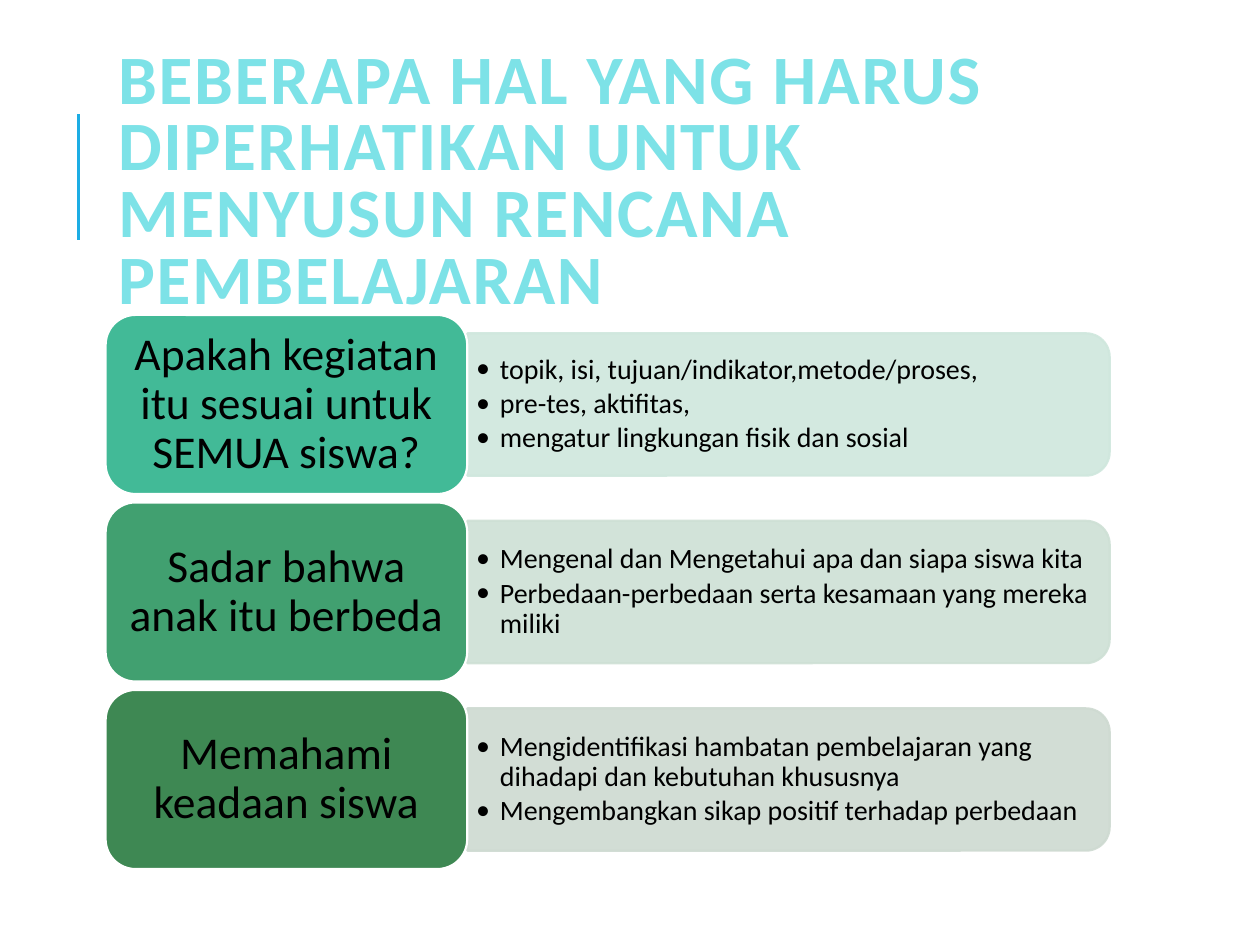
"""Build a slide of three lesson-planning points with their details."""
from dataclasses import dataclass

from lxml.etree import SubElement
from pptx import Presentation
from pptx.dml.color import RGBColor
from pptx.enum.shapes import MSO_CONNECTOR, MSO_SHAPE as Preset
from pptx.enum.text import MSO_ANCHOR as Anchor, MSO_AUTO_SIZE as AutoSize, PP_ALIGN as Align
from pptx.oxml.ns import qn
from pptx.util import Cm, Pt


@dataclass(frozen=True)
class Theme:
    """Colours, font and type sizes of the slide."""

    font: str = "Calibri"
    title: str = "7DE2E7"
    accent: str = "1CADE4"
    text: str = "000000"
    outline: str = "FFFFFF"
    title_size: float = 39.6
    label_size: float = 26
    detail_size: float = 16
    line_width: float = 1.25
    accent_width: float = 1.5
    panel_alpha: int = 90000


@dataclass(frozen=True)
class Box:
    """A rectangle in centimetres."""

    left: float
    top: float
    width: float
    height: float

    def lengths(self) -> tuple:
        """Return the position and size as slide lengths."""
        return tuple(Cm(v) for v in (self.left, self.top, self.width, self.height))


@dataclass(frozen=True)
class Point:
    """A question or principle with its details."""

    label: str
    details: tuple[str, ...]
    label_fill: str
    panel_fill: str


THEME = Theme()
TITLE = "BEBERAPA HAL YANG HARUS DIPERHATIKAN UNTUK MENYUSUN RENCANA PEMBELAJARAN"
TITLE_BOX = Box(2.13, 1.63, 20.24, 4.17)
LABEL_BOX = Box(2.13, 6.35, 7.29, 3.61)
ROW_PITCH = 3.78
PANEL_WIDTH, PANEL_HEIGHT = 12.95, 2.87
DETAIL_WIDTH, DETAIL_HEIGHT = 12.83, 2.59
HANGING = 0.48
POINTS = (
    Point(
        "Apakah kegiatan itu sesuai untuk SEMUA siswa?",
        (
            "topik, isi, tujuan/indikator,metode/proses,",
            "pre-tes, aktifitas,",
            "mengatur lingkungan fisik dan sosial",
        ),
        "42BA97",
        "CFE7DD",
    ),
    Point(
        "Sadar bahwa anak itu berbeda",
        (
            "Mengenal dan Mengetahui apa dan siapa siswa kita",
            "Perbedaan-perbedaan serta kesamaan yang mereka miliki",
        ),
        "41A070",
        "CEE0D5",
    ),
    Point(
        "Memahami keadaan siswa",
        (
            "Mengidentifikasi hambatan pembelajaran yang dihadapi dan kebutuhan khususnya",
            "Mengembangkan sikap positif terhadap perbedaan",
        ),
        "3E8853",
        "CEDAD1",
    ),
)


def apply(target, formats: dict) -> None:
    """Set each named format value on the target."""
    for name, value in formats.items():
        setattr(target, name, value)


def format_frame(frame, horizontal: float, vertical: float) -> None:
    """Centre a wrapped text frame vertically and set its insets."""
    apply(frame, {
        "word_wrap": True,
        "auto_size": AutoSize.NONE,
        "vertical_anchor": Anchor.MIDDLE,
        "margin_left": Cm(horizontal),
        "margin_right": Cm(horizontal),
        "margin_top": Cm(vertical),
        "margin_bottom": Cm(vertical),
    })


def write(paragraph, text: str, size: float, formats: dict, color: str = THEME.text, bold: bool = False):
    """Write one run in a formatted paragraph and return the run."""
    apply(paragraph, formats)
    run = paragraph.add_run()
    run.text = text
    apply(run.font, {"name": THEME.font, "size": Pt(size), "bold": bold})
    run.font.color.rgb = RGBColor.from_string(color)
    return run


def add_bullet(paragraph) -> None:
    """Give a paragraph a hanging bullet."""
    properties = paragraph._p.get_or_add_pPr()
    properties.set("marL", str(Cm(HANGING)))
    properties.set("indent", str(-Cm(HANGING)))
    SubElement(properties, qn("a:buFont"), typeface=THEME.font)
    SubElement(properties, qn("a:buChar"), char="•")


def add_filled(slide, preset, box: Box, fill: str, outline: str):
    """Add a flat preset shape with a solid fill and outline."""
    shape = slide.shapes.add_shape(preset, *box.lengths())
    shape.shadow.inherit = False
    shape.fill.solid()
    shape.fill.fore_color.rgb = RGBColor.from_string(fill)
    shape.line.color.rgb = RGBColor.from_string(outline)
    shape.line.width = Pt(THEME.line_width)
    return shape


def add_title(slide) -> None:
    """Fill the title placeholder and draw the accent line beside it."""
    heading = slide.shapes.title
    apply(heading, dict(zip(("left", "top", "width", "height"), TITLE_BOX.lengths())))
    format_frame(heading.text_frame, 0.25, 0.13)
    run = write(
        heading.text_frame.paragraphs[0], TITLE, THEME.title_size,
        {"alignment": Align.LEFT, "line_spacing": 0.8}, THEME.title, True,
    )
    run.font._element.set("spc", "100")
    accent = slide.shapes.add_connector(
        MSO_CONNECTOR.STRAIGHT, Cm(1.58), Cm(4.83), Cm(1.58), Cm(2.29)
    )
    accent.line.color.rgb = RGBColor.from_string(THEME.accent)
    accent.line.width = Pt(THEME.accent_width)
    SubElement(accent._element.spPr, qn("a:effectLst"))


def add_panel(slide, left: float, middle: float, fill: str) -> None:
    """Add a translucent panel turned so its rounded corners face right."""
    box = Box(
        left + (PANEL_WIDTH - PANEL_HEIGHT) / 2, middle - PANEL_WIDTH / 2,
        PANEL_HEIGHT, PANEL_WIDTH,
    )
    panel = add_filled(slide, Preset.ROUND_2_SAME_RECTANGLE, box, fill, fill)
    panel.rotation = 90
    for color in panel._element.spPr.iter(qn("a:srgbClr")):
        SubElement(color, qn("a:alpha"), val=str(THEME.panel_alpha))


def add_details(slide, left: float, middle: float, details: tuple[str, ...]) -> None:
    """Add the bulleted details over a panel."""
    box = Box(left, middle - DETAIL_HEIGHT / 2, DETAIL_WIDTH, DETAIL_HEIGHT)
    frame = slide.shapes.add_textbox(*box.lengths()).text_frame
    format_frame(frame, 0.18, 0.08)
    for index, detail in enumerate(details):
        paragraph = frame.add_paragraph() if index else frame.paragraphs[0]
        add_bullet(paragraph)
        write(paragraph, detail, THEME.detail_size,
              {"level": 1, "line_spacing": 0.9, "space_after": Pt(2.4)})


def add_point(slide, point: Point, row: int) -> None:
    """Draw one row: panel, details and label."""
    box = Box(LABEL_BOX.left, LABEL_BOX.top + row * ROW_PITCH, LABEL_BOX.width, LABEL_BOX.height)
    right, middle = box.left + box.width, box.top + box.height / 2
    add_panel(slide, right, middle, point.panel_fill)
    add_details(slide, right, middle, point.details)
    label = add_filled(slide, Preset.ROUNDED_RECTANGLE, box, point.label_fill, THEME.outline)
    format_frame(label.text_frame, 0.25, 0.13)
    write(label.text_frame.paragraphs[0], point.label, THEME.label_size,
          {"alignment": Align.CENTER, "line_spacing": 0.9})


def main() -> None:
    """Build and save the slide."""
    deck = Presentation()
    apply(deck, {"slide_width": Cm(25.4), "slide_height": Cm(19.05)})
    slide = deck.slides.add_slide(deck.slide_layouts.get_by_name("Title Only"))
    add_title(slide)
    for row, point in enumerate(POINTS):
        add_point(slide, point, row)
    deck.save("out.pptx")


if __name__ == "__main__":
    main()
